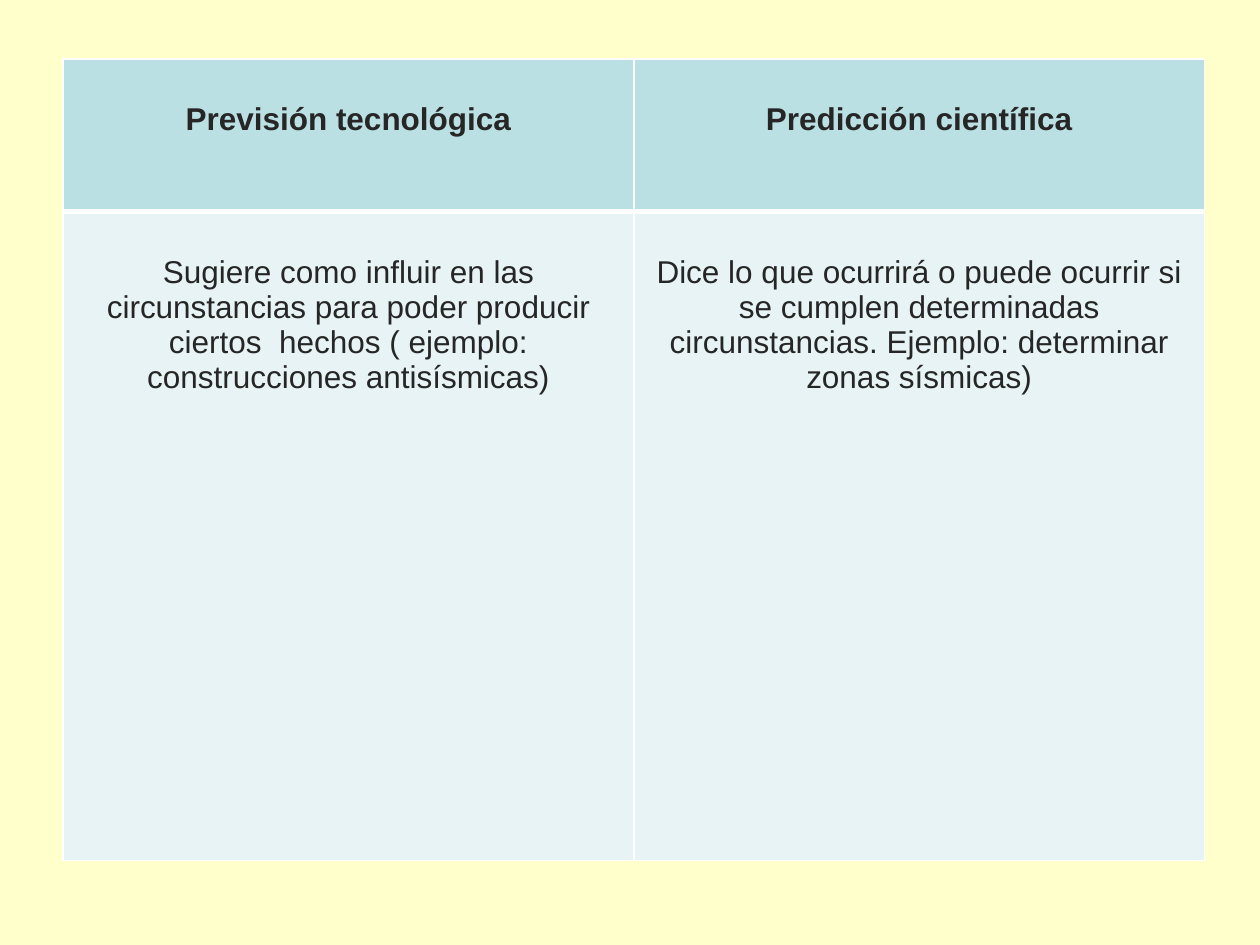
"""Builds a slide comparing technological foresight with scientific prediction."""
import pptx
import pptx.dml.color
import pptx.enum.text
import pptx.oxml
import pptx.oxml.ns
import pptx.util
from pptx.util import Inches

COLORS = {"background": "FFFFCC", "heading": "BBE0E3", "body": "E7F3F4",
          "border": "FFFFFF", "text": "262626"}
COMPARISON = [
    ("heading", 1.21, ("Previsión tecnológica", "Predicción científica")),
    ("body", 5.15, (
        "Sugiere como influir en las circunstancias para poder producir "
        "ciertos  hechos ( ejemplo: construcciones antisísmicas)",
        "Dice lo que ocurrirá o puede ocurrir si se cumplen determinadas "
        "circunstancias. Ejemplo: determinar zonas sísmicas)")),
]
BORDERS = {"heading": {"lnL": 1, "lnR": 1, "lnT": 1, "lnB": 3},
           "body": {"lnL": 1, "lnR": 1, "lnT": 3, "lnB": 1}}
MARGINS = {"margin_left": 0.1, "margin_right": 0.1,
           "margin_top": 0.34, "margin_bottom": 0.05}
LEFT, TOP, COLUMN_WIDTH = 0.5, 0.47, 4.53


def rgb(part):
    return pptx.dml.color.RGBColor.from_string(COLORS[part])


def add_borders(cell, widths):
    properties = cell._tc.get_or_add_tcPr()
    for side, width in widths.items():
        properties.append(pptx.oxml.parse_xml(
            f'<a:{side} {pptx.oxml.ns.nsdecls("a")} w="{pptx.util.Pt(width)}">'
            f'<a:solidFill><a:srgbClr val="{COLORS["border"]}"/></a:solidFill>'
            f'</a:{side}>'))


def fill_cell(cell, part, wording):
    for margin, length in MARGINS.items():
        setattr(cell, margin, Inches(length))
    add_borders(cell, BORDERS[part])
    cell.fill.solid()
    cell.fill.fore_color.rgb = rgb(part)
    paragraph = cell.text_frame.paragraphs[0]
    paragraph.alignment = pptx.enum.text.PP_ALIGN.CENTER
    run = paragraph.add_run()
    run.text = wording
    font_format = {"name": "Arial", "size": pptx.util.Pt(18),
                   "bold": part == "heading"}
    for attribute, value in font_format.items():
        setattr(run.font, attribute, value)
    run.font.color.rgb = rgb("text")


def main():
    presentation = pptx.Presentation()
    presentation.slide_width, presentation.slide_height = Inches(10), Inches(7.5)
    slide = presentation.slides.add_slide(presentation.slide_layouts[6])
    slide.background.fill.solid()
    slide.background.fill.fore_color.rgb = rgb("background")

    columns = len(COMPARISON[0][2])
    height = sum(row_height for _, row_height, _ in COMPARISON)
    comparison = slide.shapes.add_table(
        len(COMPARISON), columns, Inches(LEFT), Inches(TOP),
        Inches(columns * COLUMN_WIDTH), Inches(height)).table
    for row, (part, row_height, wordings) in enumerate(COMPARISON):
        comparison.rows[row].height = Inches(row_height)
        for column, wording in enumerate(wordings):
            fill_cell(comparison.cell(row, column), part, wording)

    presentation.save("out.pptx")


if __name__ == "__main__":
    main()
